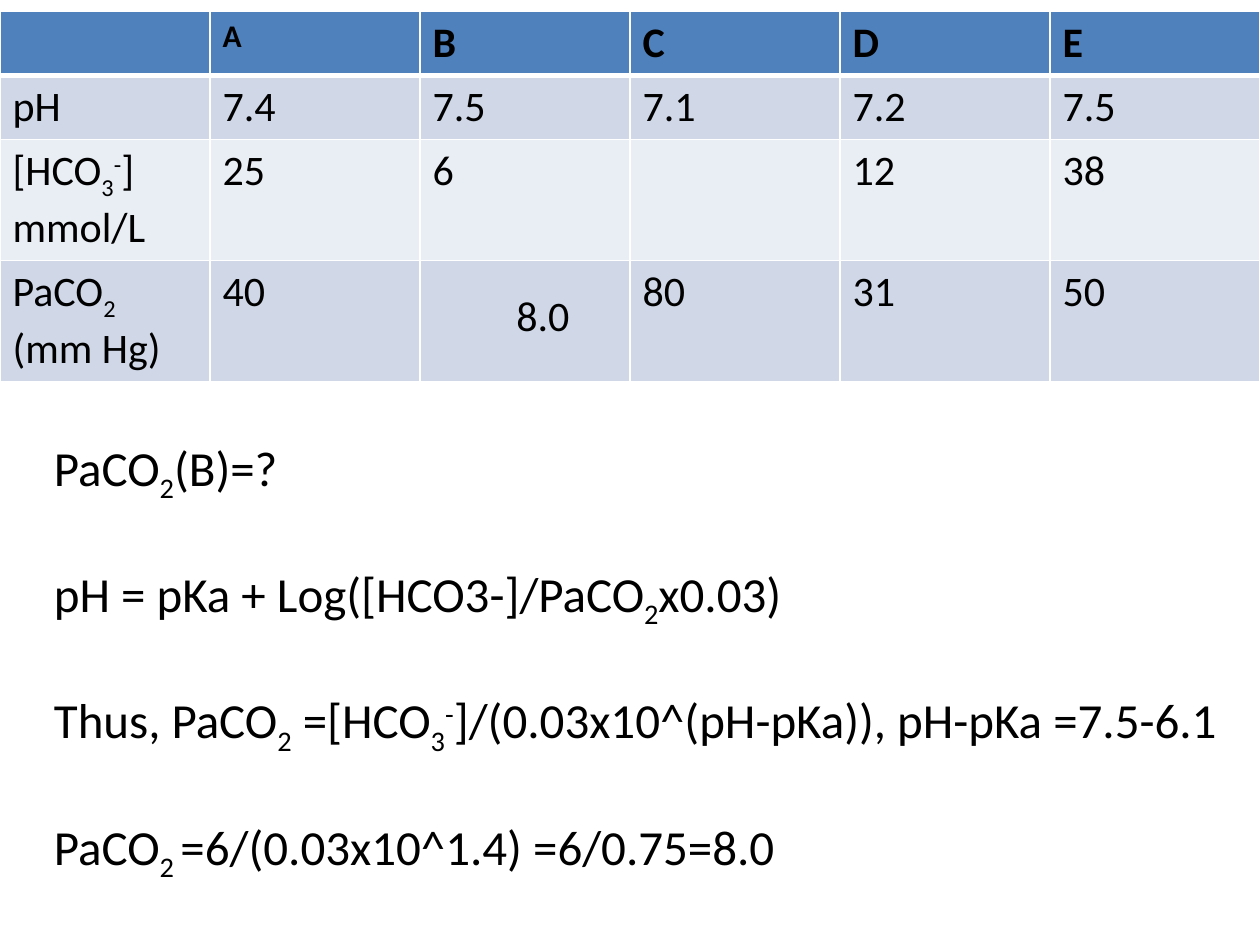
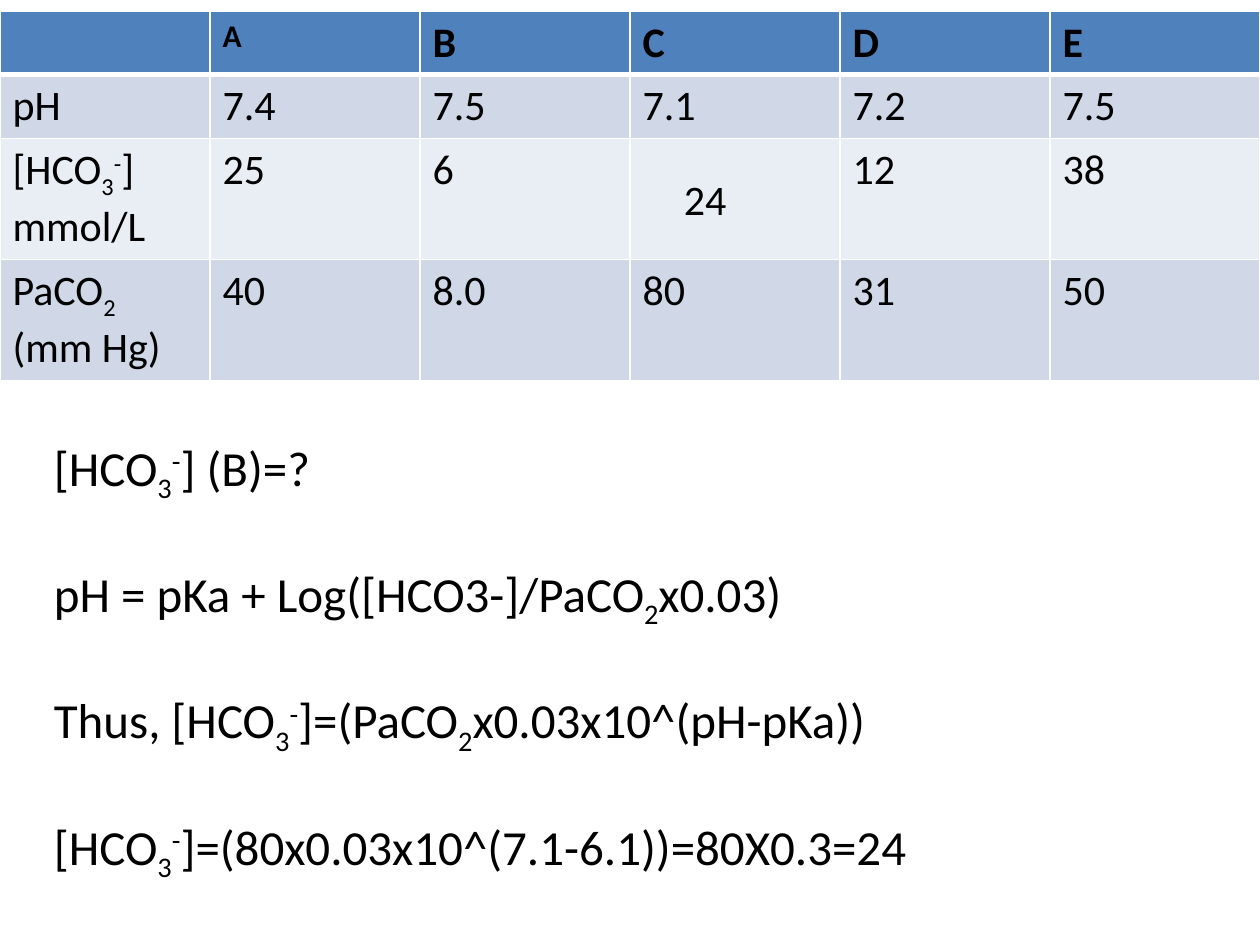
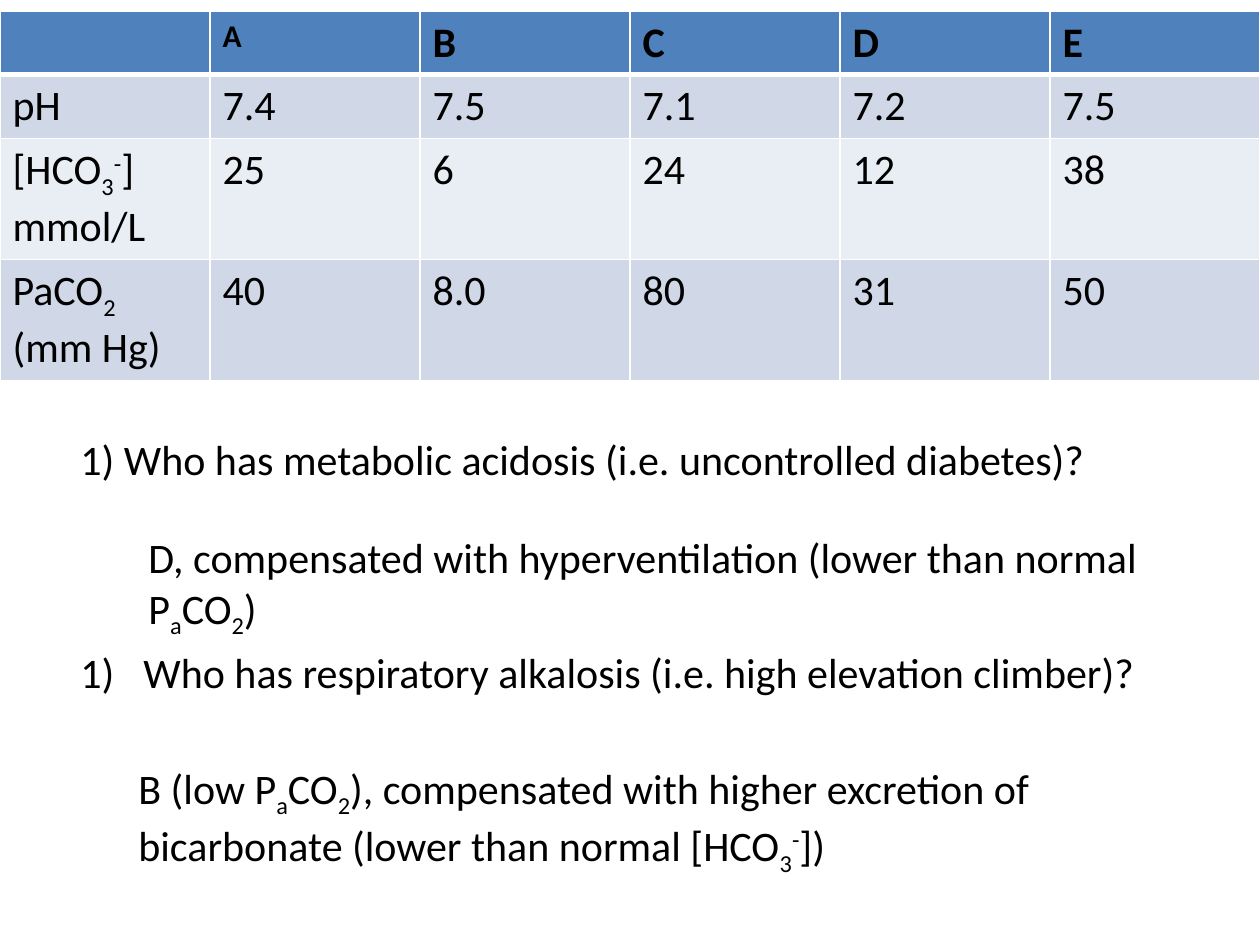
"""Build three slides on acid-base values: a shared table with workings and questions."""
from dataclasses import dataclass

from pptx import Presentation
from pptx.dml.color import RGBColor
from pptx.enum.text import MSO_AUTO_SIZE
from pptx.oxml.ns import qn
from pptx.oxml.xmlchemy import OxmlElement
from pptx.util import Inches, Pt

GROW = MSO_AUTO_SIZE.SHAPE_TO_FIT_TEXT
BASELINES = {"_": "-25000", "^": "30000"}


@dataclass(frozen=True)
class Theme:
    """Colours, font and type sizes in points."""

    font: str = "Calibri"
    ink: str = "000000"
    line: str = "FFFFFF"
    header: str = "4F81BD"
    bands: tuple = ("D0D8E8", "E9EDF4")
    small: int = 18
    body: int = 24
    formula: int = 28
    formula_gap: int = 34
    thin: int = 1
    thick: int = 3


THEME = Theme()
TABLE_BOX = (0, 0.09, 10)
ROW_HEIGHTS = (0.5, 0.51, 0.96, 0.96)
PATIENTS = ("", "A", "B", "C", "D", "E")
PH = ("pH", "7.4", "7.5", "7.1", "7.2", "7.5")
HENDERSON = "pH = pKa + Log([HCO3-]/PaCO|_2|x0.03)"


def add_spans(para, marked, size, bold=False):
    """Add runs split at bars; a leading _ lowers a run and ^ raises it."""
    for part in marked.split("|"):
        baseline = BASELINES.get(part[:1])
        span = para.add_run()
        span.text = part[1:] if baseline else part
        font = span.font
        font.name, font.size, font.bold = THEME.font, Pt(size), bold
        font.color.rgb = RGBColor.from_string(THEME.ink)
        if baseline:
            font._element.set("baseline", baseline)


def add_text(page, box, lines, size=THEME.body, wrap=True, gap=0):
    """Add a text box with one paragraph per line and return its paragraphs."""
    frame = page.shapes.add_textbox(*map(Inches, box)).text_frame
    frame.word_wrap = wrap
    frame.auto_size = GROW
    for index, line in enumerate(lines):
        para = frame.add_paragraph() if index else frame.paragraphs[0]
        para.space_before = Pt(gap if index else 0)
        add_spans(para, line, size)
    return frame.paragraphs


def number(para, indent):
    """Give a paragraph an automatic number with a hanging indent."""
    properties = para._p.get_or_add_pPr()
    properties.set("marL", str(Inches(indent)))
    properties.set("indent", str(-Inches(indent)))
    mark = OxmlElement("a:buAutoNum")
    mark.set("type", "arabicParenR")
    properties.append(mark)


def style_cell(cell, fill, bottom):
    """Set the borders and fill of a table cell."""
    properties = cell._tc.get_or_add_tcPr()
    for side in "LRTB":
        line = OxmlElement(f"a:ln{side}")
        line.set("w", str(Pt(bottom if side == "B" else THEME.thin)))
        paint = OxmlElement("a:solidFill")
        colour = OxmlElement("a:srgbClr")
        colour.set("val", THEME.line)
        paint.append(colour)
        line.append(paint)
        properties.append(line)
    cell.fill.solid()
    cell.fill.fore_color.rgb = RGBColor.from_string(fill)


def add_blood_table(page, box, bicarbonate_c, pressure_b):
    """Add the blood gas table, leaving blank any value still to be found."""
    rows = (
        PATIENTS,
        PH,
        ("[HCO|_3|^-|] mmol/L", "25", "6", bicarbonate_c, "12", "38"),
        ("PaCO|_2| (mm Hg)", "40", pressure_b, "80", "31", "50"),
    )
    left, top, width = map(Inches, box)
    height = Inches(sum(ROW_HEIGHTS))
    table = page.shapes.add_table(len(rows), len(PATIENTS), left, top, width, height).table
    table.horz_banding = False
    for row_index, values in enumerate(rows):
        table.rows[row_index].height = Inches(ROW_HEIGHTS[row_index])
        header = row_index == 0
        fill = THEME.header if header else THEME.bands[(row_index - 1) % 2]
        for column, value in enumerate(values):
            cell = table.cell(row_index, column)
            style_cell(cell, fill, THEME.thick if header else THEME.thin)
            if value:
                size = THEME.small if value == "A" else THEME.body
                add_spans(cell.text_frame.paragraphs[0], value, size, header)


def add_page(deck, bicarbonate_c="", pressure_b=""):
    """Add a blank page headed by the blood gas table."""
    page = deck.slides.add_slide(deck.slide_layouts[6])
    add_blood_table(page, TABLE_BOX, bicarbonate_c, pressure_b)
    return page


def add_working(page, width, lines):
    """Add the spaced formula lines below the table."""
    add_text(page, (0.33, 3.42, width, 3.4), lines, THEME.formula, False, THEME.formula_gap)


def build_pressure_page(deck):
    """Find the carbon dioxide pressure of patient B."""
    page = add_page(deck)
    add_working(page, 9.58, (
        "PaCO|_2|(B)=?",
        HENDERSON,
        "Thus, PaCO|_2| =[HCO|_3|^-|]/(0.03x10^(pH-pKa)), pH-pKa =7.5-6.1",
        "PaCO|_2 |=6/(0.03x10^1.4) =6/0.75=8.0",
    ))
    add_text(page, (4, 2.25, 1, 0.5), ["8.0"])


def build_bicarbonate_page(deck):
    """Find the missing bicarbonate value."""
    page = add_page(deck, pressure_b="8.0")
    add_working(page, 7.07, (
        "[HCO|_3|^-|] (B)=?",
        HENDERSON,
        "Thus, [HCO|_3|^-|]=(PaCO|_2|x0.03x10^(pH-pKa))",
        "[HCO|_3|^-|]=(80x0.03x10^(7.1-6.1))=80X0.3=24",
    ))
    add_text(page, (5.33, 1.33, 0.54, 0.5), ["24"], wrap=False)


def build_question_page(deck):
    """Ask and answer the two diagnosis questions."""
    page = add_page(deck, "24", "8.0")
    add_text(page, (0.54, 3.39, 8.25, 0.5),
             ["1) Who has metabolic acidosis (i.e. uncontrolled diabetes)?"], wrap=False)
    add_text(page, (1.08, 4.17, 8.17, 0.91),
             ["D, compensated with hyperventilation (lower than normal P|_a|CO|_2|)"])
    question = add_text(page, (0.54, 5.08, 8.63, 0.5),
                        ["Who has respiratory alkalosis (i.e. high elevation climber)?"],
                        wrap=False)
    number(question[0], 0.5)
    add_text(page, (1, 6, 8.17, 0.91),
             ["B (low P|_a|CO|_2|), compensated with higher excretion of "
              "bicarbonate (lower than normal [HCO|_3|^-|])"])


def main():
    """Build and save the deck."""
    deck = Presentation()
    deck.slide_width, deck.slide_height = Inches(10), Inches(7.5)
    build_pressure_page(deck)
    build_bicarbonate_page(deck)
    build_question_page(deck)
    deck.save("out.pptx")


if __name__ == "__main__":
    main()
